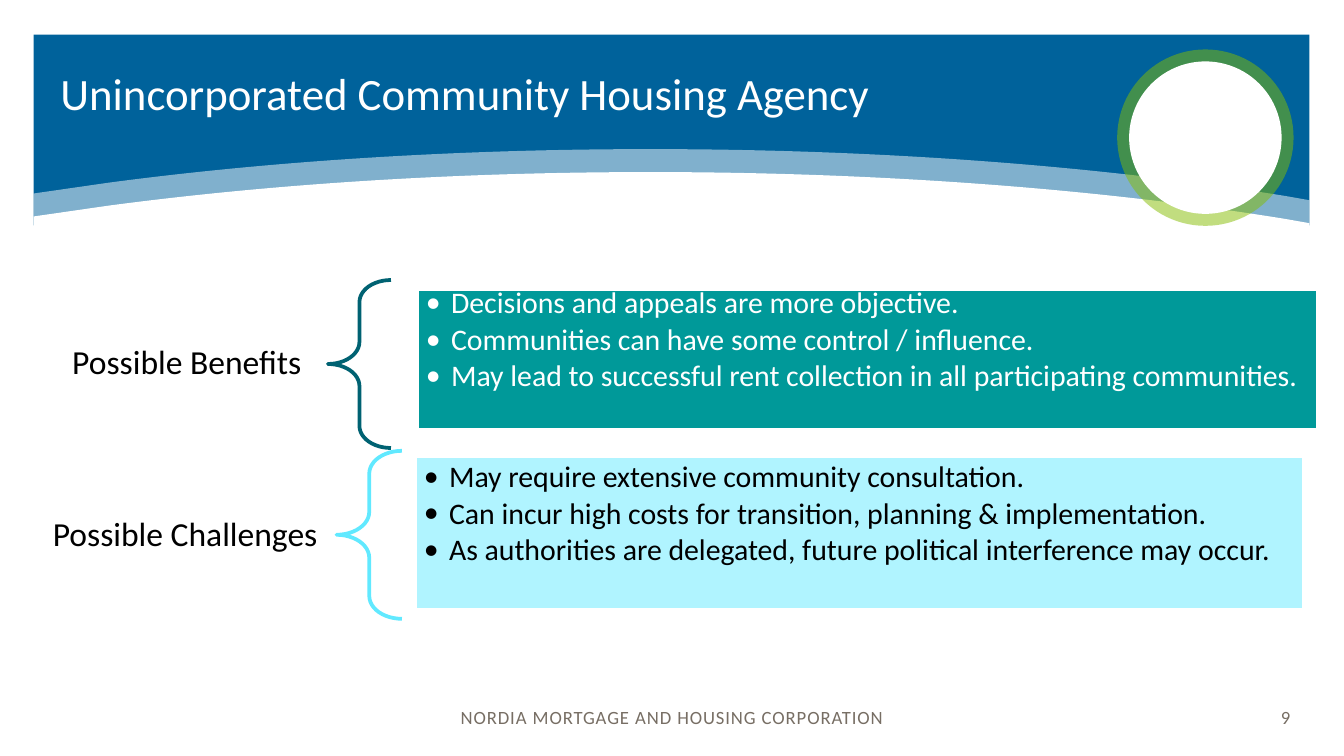
import pptx
import pptx.util
import pptx.dml.color
import pptx.enum.shapes
import pptx.enum.text
import pptx.oxml
import pptx.oxml.ns

Pt = pptx.util.Pt
SHAPES = pptx.enum.shapes.MSO_SHAPE
ALIGN = pptx.enum.text.PP_ALIGN
ANCHOR = pptx.enum.text.MSO_ANCHOR
qn = pptx.oxml.ns.qn

WHITE, BLACK, GREY = "FFFFFF", "000000", "776E64"
BAND_LEFT, BAND_RIGHT, BAND_BOTTOM = 18, 701.5, 129


def color(hex_text):
    return pptx.dml.color.RGBColor.from_string(hex_text)


def style_shape(shape, fill=None, line=None, alpha=None):
    shape.shadow.inherit = False
    if fill:
        shape.fill.solid()
        shape.fill.fore_color.rgb = color(fill)
        if alpha:
            tint = shape._element.spPr.find(qn("a:solidFill"))[0]
            tint.append(tint.makeelement(qn("a:alpha"), {"val": str(alpha * 1000)}))
    else:
        shape.fill.background()
    if line:
        shape.line.color.rgb = color(line)
        shape.line.width = Pt(2)
    else:
        shape.line.fill.background()
    return shape


def add_shape(page, kind, box, **style):
    return style_shape(page.shapes.add_shape(kind, *map(Pt, box)), **style)


def add_textbox(page, box):
    return page.shapes.add_textbox(*map(Pt, box))


def write(shape, text, size, ink, align=ALIGN.LEFT, anchor=ANCHOR.MIDDLE,
          insets=(7.2, 3.6, 7.2, 3.6), spacing=None, after=0, bullet=False,
          tracking=0):
    """Fill a shape with one paragraph per line; insets are left, top, right, bottom."""
    frame = shape.text_frame
    frame.word_wrap = True
    frame.vertical_anchor = anchor
    frame.margin_left, frame.margin_top, frame.margin_right, frame.margin_bottom = map(Pt, insets)
    for index, line in enumerate(text.split("\n")):
        para = frame.add_paragraph() if index else frame.paragraphs[0]
        para.alignment = align
        para.line_spacing = spacing
        para.space_after = Pt(after)
        if bullet:
            settings = para._p.get_or_add_pPr()
            settings.set("marL", str(Pt(13.5)))
            settings.set("indent", str(Pt(-13.5)))
            for tag, value in (("buFont", {"typeface": "Calibri"}), ("buChar", {"char": "•"})):
                settings.append(settings.makeelement(qn("a:" + tag), value))
        span = para.add_run()
        span.text = line
        span.font.name = "Calibri"
        span.font.size = Pt(size)
        span.font.color.rgb = color(ink)
        if tracking:
            span._r.get_or_add_rPr().set("spc", str(int(tracking * 100)))


def bend(shape, first):
    """Turn three straight segments, counted from first, into one cubic curve."""
    lines = shape._element.findall(".//" + qn("a:lnTo"))[first:first + 3]
    cubic = lines[0].makeelement(qn("a:cubicBezTo"), {})
    lines[0].addprevious(cubic)
    for line in lines:
        cubic.append(line[0])
        line.getparent().remove(line)


def add_arch(page, crest, alpha=None):
    """White area below an arched edge whose highest point is at crest."""
    edge = [(BAND_LEFT, 23.8), (58.3, 18),
            (144.7, 6.5), (243.4, 0), (348.5, 0),
            (474.5, 0), (591.8, 9.4), (689, 25.2),
            (BAND_RIGHT, 27.4)]
    points = [(x, y + crest) for x, y in edge]
    points += [(BAND_RIGHT, BAND_BOTTOM), (BAND_LEFT, BAND_BOTTOM)]
    points = [(Pt(x), Pt(y)) for x, y in points]
    builder = page.shapes.build_freeform(*points[0])
    builder.add_line_segments(points[1:], close=True)
    arch = style_shape(builder.convert_to_shape(), WHITE, alpha=alpha)
    bend(arch, 4)
    bend(arch, 1)


def add_ring(page, box, thickness):
    left, top, width, height = box
    add_shape(page, SHAPES.OVAL, box, fill="84BD00", alpha=50)
    hole = (left + thickness, top + thickness, width - 2 * thickness, height - 2 * thickness)
    add_shape(page, SHAPES.OVAL, hole, fill=WHITE)


def add_header(page, box, title):
    left, top, width, height = box
    add_shape(page, SHAPES.RECTANGLE, box, fill="00629B")
    add_arch(page, 79.9, alpha=50)
    add_arch(page, 92.2)
    add_ring(page, (left + width - 103, top + 8, 94.5, 94.5), 6.4)
    heading = add_textbox(page, (left + 7.3, top + 13.2, 566, 64))
    write(heading, title, 24, WHITE, anchor=ANCHOR.TOP, spacing=Pt(26),
          insets=(7.2, 6.3, 7.2, 0))


def add_group(page, label_box, label, brace_box, brace_ink, panel_box, panel_fill,
              points, ink, text_shift):
    write(add_textbox(page, label_box), label, 18, BLACK, align=ALIGN.RIGHT,
          spacing=0.9, insets=(0, 3.6, 10.1, 3.6))
    brace = add_shape(page, SHAPES.LEFT_BRACE, brace_box, line=brace_ink)
    brace.adjustments[0] = 0.35
    add_shape(page, SHAPES.RECTANGLE, panel_box, fill=panel_fill, line=WHITE)
    left, top, width, height = panel_box
    write(add_textbox(page, (left, top + text_shift, width, height)), points, 16, ink,
          anchor=ANCHOR.TOP, spacing=0.9, after=2.3, bullet=True, insets=(4.6, 0, 4.6, 0))


def add_footer(page, box, owner, number):
    left, top, width, height = box
    strip = add_shape(page, SHAPES.RECTANGLE, box, fill=WHITE)
    write(strip, owner, 10, GREY, align=ALIGN.CENTER, tracking=0.5, insets=(0, 0, 0, 0))
    corner = add_textbox(page, (left + width - 62, top, 40.3, height))
    write(corner, number, 10, GREY, align=ALIGN.RIGHT, tracking=0.5)


def main():
    deck = pptx.Presentation()
    deck.slide_width, deck.slide_height = Pt(720), Pt(405)
    page = deck.slides.add_slide(deck.slide_layouts[6])
    add_header(page, (BAND_LEFT, 18.5, BAND_RIGHT - BAND_LEFT, 102.3),
               "Unincorporated Community Housing Agency")
    add_footer(page, (0, 363.6, 720, 41.4), "NORDIA MORTGAGE AND HOUSING CORPORATION", "9")
    add_group(page, (5, 181, 166.6, 27.4), "Possible Benefits",
              (175.7, 150, 33.8, 90), "006272",
              (223.6, 154.9, 482.4, 75.5), "009999",
              "Decisions and appeals are more objective.\n"
              "Communities can have some control / influence.\n"
              "May lead to successful rent collection in all participating communities.",
              WHITE, -0.5)
    add_group(page, (5, 273, 175.3, 27.4), "Possible Challenges",
              (180.3, 241.5, 35, 90), "61E9FF",
              (222.5, 244.4, 476.2, 82.3), "B0F4FF",
              "May require extensive community consultation.\n"
              "Can incur high costs for transition, planning & implementation.\n"
              "As authorities are delegated, future political interference may occur.",
              BLACK, 3.1)
    deck.save("out.pptx")


if __name__ == "__main__":
    main()
